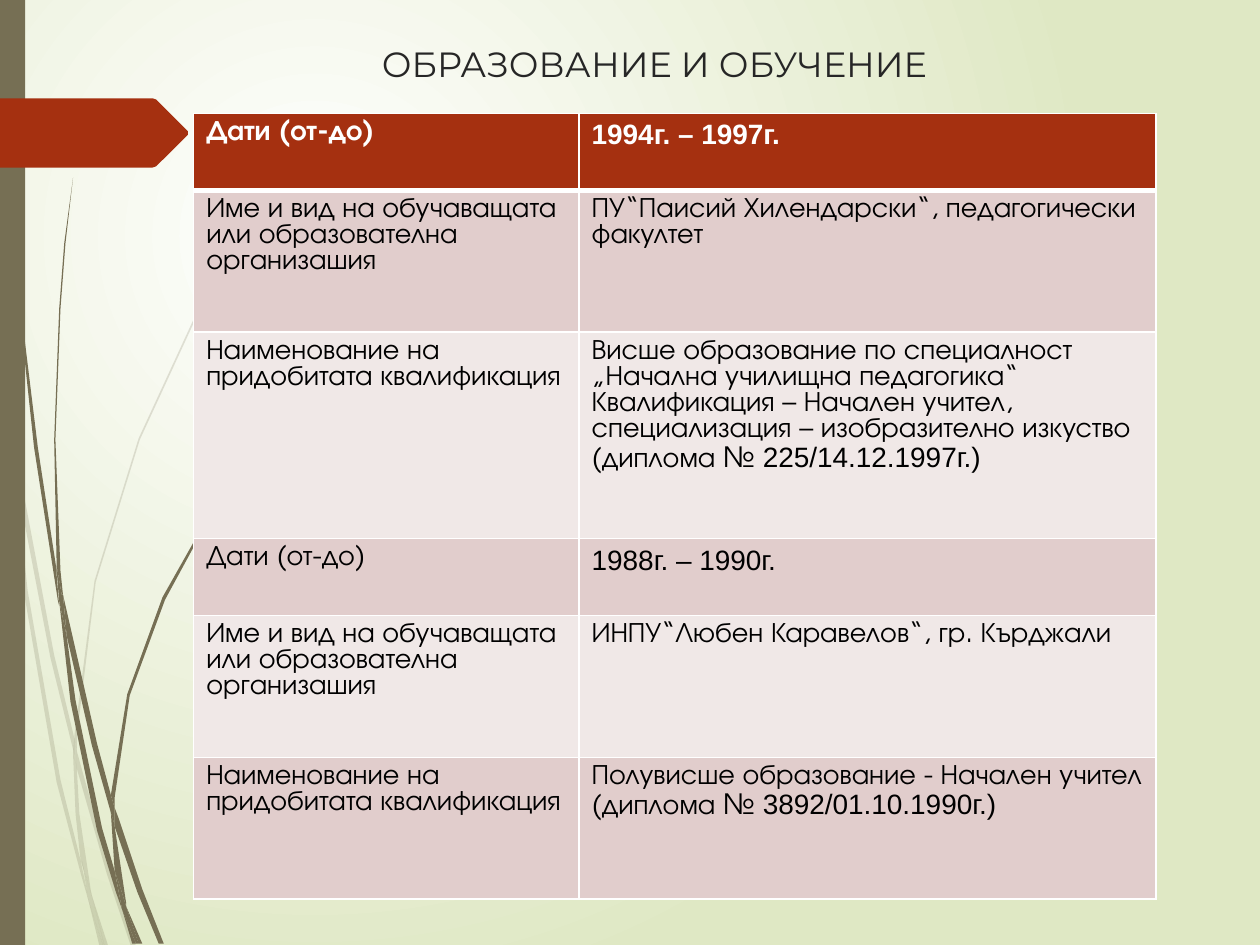
from lxml import etree
from pptx import Presentation
from pptx.dml.color import RGBColor
from pptx.enum.shapes import MSO_SHAPE
from pptx.enum.text import MSO_ANCHOR, PP_ALIGN
from pptx.oxml.ns import qn
from pptx.util import Pt

RECT = MSO_SHAPE.RECTANGLE
TOP = MSO_ANCHOR.TOP
CENTER = PP_ALIGN.CENTER

WHITE = RGBColor(0xFF, 0xFF, 0xFF)
BLACK = RGBColor(0x00, 0x00, 0x00)
INK = RGBColor(0x26, 0x26, 0x26)
PALE_GREEN = RGBColor(0xDF, 0xE8, 0xC4)
OLIVE = RGBColor(0x76, 0x6F, 0x54)
RUST = RGBColor(0xA5, 0x30, 0x10)
ROSE = RGBColor(0xE1, 0xCD, 0xCC)
LIGHT_ROSE = RGBColor(0xF0, 0xE8, 0xE7)

ADVENTOR, ARIAL, MONTSERRAT = "TeX Gyre Adventor", "Arial", "Montserrat"
GRID = Pt(0.72)  # unit of the outlines below: a hundredth of an inch

FAINT_GRASS = [
    [(8, 350), (6, 322), (0, 282), (0, 299), (7, 344)],
    [(40, 522), (59, 599), (59, 586), (43, 520), (10, 345), (12, 376)],
    [(64, 607), (61, 596), (61, 610), (85, 694), (104, 751), (108, 751), (88, 692)],
    [(83, 751), (86, 751), (73, 711)],
    [(64, 683), (48, 619), (22, 469), (12, 376), (8, 350), (19, 470), (45, 621),
     (64, 693), (70, 714), (69, 707)],
    [(58, 599), (60, 646), (64, 683), (67, 692), (73, 711), (72, 706), (63, 646),
     (61, 610), (61, 608)],
    [(61, 584), (76, 462), (111, 349), (159, 245), (187, 198), (201, 175), (217, 154),
     (217, 153), (201, 175), (186, 197), (158, 244), (110, 348), (75, 461), (59, 584),
     (59, 586), (61, 596)],
    [(70, 714), (79, 751), (82, 751)],
    [(61, 608), (61, 610), (61, 596), (59, 586), (58, 599)],
    [(67, 692), (65, 683), (69, 707), (70, 714), (82, 751), (83, 751), (73, 711)],
]
DARK_GRASS = [
    [(5, 110), (14, 233), (27, 355), (46, 477), (47, 481), (45, 457), (45, 453),
     (30, 355), (15, 232), (6, 109), (4, 48), (3, 0), (2, 0), (3, 48)],
    [(73, 592), (88, 645), (88, 633), (88, 631), (77, 590), (50, 472), (53, 505)],
    [(94, 649), (91, 641), (91, 656), (109, 708), (126, 749), (130, 749), (113, 706)],
    [(91, 691), (81, 657), (60, 556), (53, 505), (47, 477), (56, 557), (77, 659),
     (92, 708), (97, 722), (96, 717)],
    [(50, 472), (48, 453), (44, 349), (48, 245), (52, 193), (58, 141), (51, 193),
     (47, 245), (43, 349), (45, 449), (49, 472)],
    [(110, 749), (113, 749), (100, 719)],
    [(47, 477), (53, 505), (50, 472), (49, 472), (45, 449), (45, 453)],
    [(91, 633), (103, 552), (131, 476), (169, 406), (191, 374), (203, 359), (216, 344),
     (215, 344), (203, 358), (191, 373), (168, 405), (129, 474), (101, 551), (88, 631),
     (91, 641)],
    [(97, 722), (105, 749), (108, 749)],
    [(88, 645), (91, 691), (96, 706), (100, 719), (100, 716), (91, 656), (90, 651)],
    [(88, 645), (90, 651), (91, 656), (91, 641), (88, 631), (88, 633)],
    [(96, 706), (91, 691), (96, 717), (97, 722), (108, 749), (110, 749), (100, 719)],
]
FLAG = [(0, 78), (121, 78), (124, 79), (149, 104), (149, 107), (124, 132), (121, 133),
        (0, 133)]

DATES = "Дати (от-до)"
SCHOOL = "Име и вид на обучаващата или образователна организашия"
DEGREE = "Наименование на придобитата квалификация"
# Each row: height, label, then the paragraphs of the answer as (text, font) runs.
ROWS = [
    (44, DATES, [[("1994г. – 1997г.", ARIAL)]]),
    (81, SCHOOL, [[("ПУ“Паисий Хилендарски“, педагогически факултет", ADVENTOR)]]),
    (118, DEGREE, [
        [("Висше образование по специалност „Начална училищна педагогика“", ADVENTOR)],
        [("Квалификация – Начален учител, специализация – изобразително изкуство",
          ADVENTOR)],
        [("(диплома №", ADVENTOR), (" 225/14.12.1997г.)", ARIAL)]]),
    (44, DATES, [[("1988г. – 1990г.", ARIAL)]]),
    (81, SCHOOL, [[("ИНПУ“Любен Каравелов“, гр. Кърджали", ADVENTOR)]]),
    (81, DEGREE, [
        [("Полувисше образование - Начален учител", ADVENTOR)],
        [("(диплома №", ADVENTOR), (" 3892/01.10.1990г.)", ARIAL)]]),
]


def set_background(s):
    fill = s.background.fill
    fill.gradient()
    for stop, color in zip(fill.gradient_stops, (WHITE, PALE_GREEN)):
        stop.color.rgb = color
    grad = s.background._cSld.find(".//" + qn("a:gradFill"))
    lin = grad.find(qn("a:lin"))
    radial = etree.Element(qn("a:path"), path="circle")
    etree.SubElement(radial, qn("a:fillToRect"), l="50000", t="50000",
                     r="100000", b="100000")
    grad.replace(lin, radial)


def paint(sp, color, alpha=None):
    """Fill a shape, without line or shadow; alpha is a percentage."""
    sp.shadow.inherit = False
    sp.line.fill.background()
    sp.fill.solid()
    sp.fill.fore_color.rgb = color
    if alpha is not None:
        clr = sp._element.spPr.find(qn("a:solidFill"))[0]
        etree.SubElement(clr, qn("a:alpha"), val=str(alpha * 1000))


def add_outline(shapes, points, color, alpha=None):
    builder = shapes.build_freeform(*points[0], scale=GRID)
    builder.add_line_segments(points[1:], close=True)
    paint(builder.convert_to_shape(), color, alpha)


def add_grass(s, blades, alpha=None):
    group = s.shapes.add_group_shape()
    for blade in blades:
        add_outline(group.shapes, blade, OLIVE, alpha)


def add_run(p, text, font, size, color, bold=False):
    r = p.add_run()
    r.text = text
    r.font.name, r.font.size, r.font.bold = font, Pt(size), bold
    r.font.color.rgb = color


def add_title(s, text):
    tf = s.shapes.add_textbox(Pt(167), Pt(21), Pt(414), Pt(44.6)).text_frame
    tf.word_wrap = True
    tf.vertical_anchor = TOP
    p = tf.paragraphs[0]
    p.alignment = CENTER
    add_run(p, text, MONTSERRAT, 20, INK)


def set_borders(cell, bottom):
    """Draw white cell borders; must run before the cell is filled."""
    tc_pr = cell._tc.get_or_add_tcPr()
    for side, width in (("L", 1), ("R", 1), ("T", 1), ("B", bottom)):
        ln = etree.SubElement(tc_pr, qn("a:ln" + side), w=str(Pt(width)))
        solid = etree.SubElement(ln, qn("a:solidFill"))
        etree.SubElement(solid, qn("a:srgbClr"), val=str(WHITE))


def fill_cell(cell, paragraphs, color, header):
    set_borders(cell, 3 if header else 1)
    cell.fill.solid()
    cell.fill.fore_color.rgb = color
    tf = cell.text_frame
    for i, runs in enumerate(paragraphs):
        p = tf.add_paragraph() if i else tf.paragraphs[0]
        for text, font in runs:
            add_run(p, text, font, 16, WHITE if header else BLACK, header)


def add_education_table(s):
    height = sum(row[0] for row in ROWS)
    table = s.shapes.add_table(len(ROWS), 2, Pt(110.7), Pt(64.8), Pt(550),
                               Pt(height)).table
    for column, width in zip(table.columns, (220.2, 329.8)):
        column.width = Pt(width)
    for i, (row_height, label, answer) in enumerate(ROWS):
        table.rows[i].height = Pt(row_height)
        color = RUST if i == 0 else (LIGHT_ROSE, ROSE)[i % 2]
        fill_cell(table.cell(i, 0), [[(label, ADVENTOR)]], color, i == 0)
        fill_cell(table.cell(i, 1), answer, color, i == 0)


def main():
    prs = Presentation()
    prs.slide_width, prs.slide_height = Pt(720), Pt(540)
    s = prs.slides.add_slide(prs.slide_layouts[6])
    set_background(s)
    add_grass(s, FAINT_GRASS, alpha=20)
    add_grass(s, DARK_GRASS)
    paint(s.shapes.add_shape(RECT, 0, 0, Pt(14.4), Pt(540)), OLIVE)
    add_outline(s.shapes, FLAG, RUST)
    add_education_table(s)
    add_title(s, "ОБРАЗОВАНИЕ И ОБУЧЕНИЕ")
    prs.save("out.pptx")


if __name__ == "__main__":
    main()
